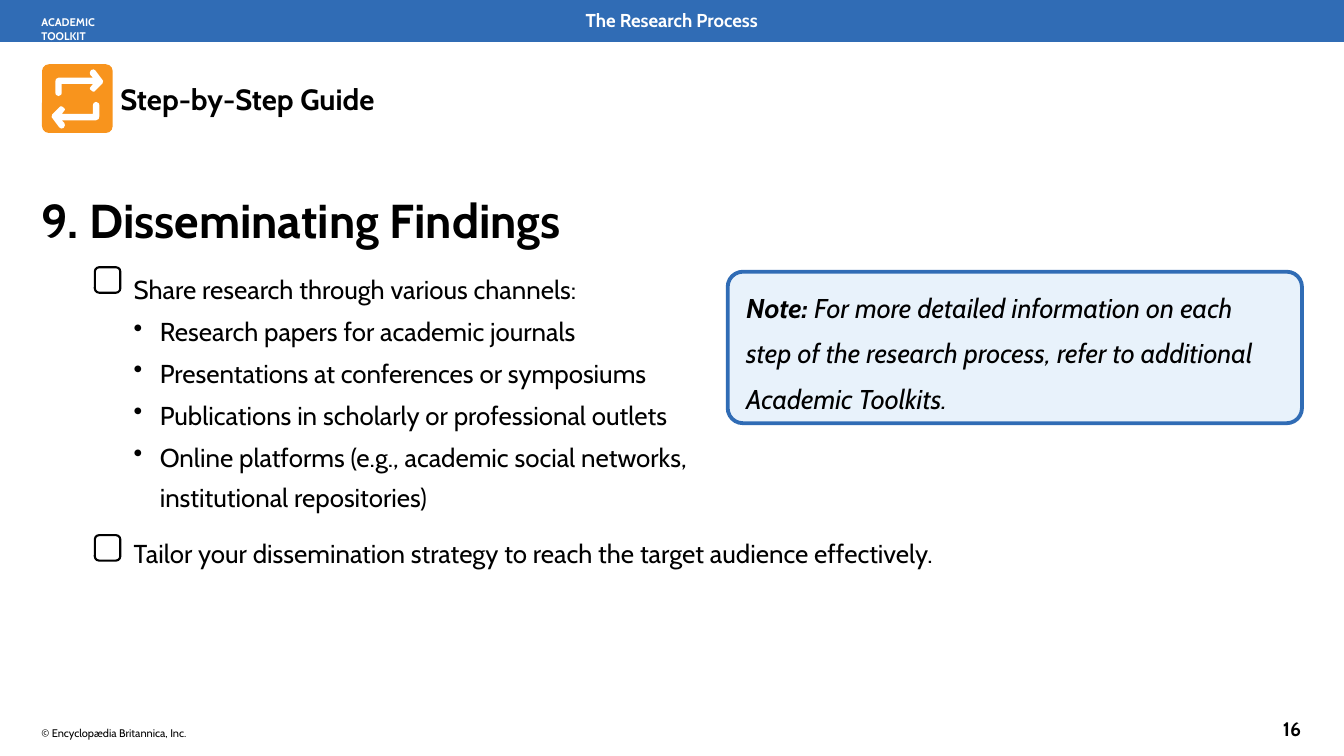
from lxml.etree import SubElement
from pptx import Presentation
from pptx.dml.color import RGBColor
from pptx.enum.shapes import MSO_SHAPE
from pptx.enum.text import MSO_ANCHOR, MSO_AUTO_SIZE, PP_ALIGN
from pptx.oxml.ns import qn
from pptx.util import Pt

PX = 9525
FONT = "Cabin"
COLOURS = {
    "blue": "306CB5",
    "pale": "E8F2FB",
    "orange": "F8941D",
    "white": "FFFFFF",
    "black": "000000",
}

CHANNELS = [
    "Research papers for academic journals",
    "Presentations at conferences or symposiums",
    "Publications in scholarly or professional outlets",
    "Online platforms (e.g., academic social networks,\vinstitutional repositories)",
]

ARROW = [
    (162, 127), (150, 111), (147, 109), (143, 110), (141, 114), (142, 118),
    (146, 122), (92, 122), (88, 124), (87, 128), (87, 146), (88, 149),
    (92, 151), (96, 149), (97, 146), (97, 132), (146, 132), (142, 137),
    (141, 139), (142, 141), (146, 144), (148, 144), (161, 131),
]
ICON_CENTRE = (121.5, 155.5)


def colour(name):
    return RGBColor.from_string(COLOURS[name])


def box(left, top, width, height):
    return [value * PX for value in (left, top, width, height)]


def style_runs(paragraph, size, bold=False, italic=False, ink="black"):
    for run in paragraph.runs:
        run.font.name = FONT
        run.font.size = Pt(size)
        run.font.bold = bold
        run.font.italic = italic
        run.font.color.rgb = colour(ink)


def prepare_frame(text_frame):
    """Wrapped text, anchored to the top, with no insets."""
    text_frame.word_wrap = True
    text_frame.auto_size = MSO_AUTO_SIZE.NONE
    text_frame.vertical_anchor = MSO_ANCHOR.TOP
    text_frame.margin_left = text_frame.margin_right = 0
    text_frame.margin_top = text_frame.margin_bottom = 0


def add_frame(slide, place):
    text_frame = slide.shapes.add_textbox(*box(*place)).text_frame
    prepare_frame(text_frame)
    return text_frame


def add_label(slide, text, place, size, align=PP_ALIGN.LEFT, **style):
    paragraph = add_frame(slide, place).paragraphs[0]
    paragraph.text = text
    paragraph.alignment = align
    style_runs(paragraph, size, **style)


def add_title(slide, text, place, size):
    title = slide.shapes.title
    title.left, title.top, title.width, title.height = box(*place)
    prepare_frame(title.text_frame)
    title.text_frame.text = text
    paragraph = title.text_frame.paragraphs[0]
    paragraph.alignment = PP_ALIGN.LEFT
    style_runs(paragraph, size, bold=True)


def paint(shape, fill=None, line=None, line_width=0):
    shape.shadow.inherit = False
    if fill:
        shape.fill.solid()
        shape.fill.fore_color.rgb = colour(fill)
    else:
        shape.fill.background()
    if line:
        shape.line.color.rgb = colour(line)
        shape.line.width = Pt(line_width)
    else:
        shape.line.fill.background()


def add_rounded(slide, place, corner, **look):
    shape = slide.shapes.add_shape(MSO_SHAPE.ROUNDED_RECTANGLE, *box(*place))
    shape.adjustments[0] = corner
    paint(shape, **look)


def add_cycle_icon(slide):
    """Orange tile with one bent arrow and the same arrow turned half round."""
    add_rounded(slide, (66, 101, 111, 108), 0.1, fill="orange")
    centre_x, centre_y = ICON_CENTRE
    turned = [(2 * centre_x - x, 2 * centre_y - y) for x, y in ARROW]
    builder = slide.shapes.build_freeform(*ARROW[0], scale=PX)
    builder.add_line_segments(ARROW[1:], close=True)
    builder.move_to(*turned[0])
    builder.add_line_segments(turned[1:], close=True)
    paint(builder.convert_to_shape(), fill="white")


def add_bullet(paragraph, indent):
    properties = paragraph._p.get_or_add_pPr()
    properties.set("marL", str(indent * PX))
    properties.set("indent", str(-indent * PX))
    SubElement(properties, qn("a:buChar")).set("char", "•")


def add_checklist(slide):
    text_frame = add_frame(slide, (210, 415, 1821, 480))
    lines = [
        ("Share research through various channels:", 0, False),
        *[(channel, 1.9, True) for channel in CHANNELS],
        ("Tailor your dissemination strategy to reach the target audience effectively.", 18, False),
    ]
    for index, (text, space_before, bulleted) in enumerate(lines):
        paragraph = text_frame.add_paragraph() if index else text_frame.paragraphs[0]
        paragraph.text = text
        paragraph.line_spacing = 1.3
        paragraph.space_before = Pt(space_before)
        if bulleted:
            add_bullet(paragraph, 41)
        style_runs(paragraph, 30.5)
    for top in (420, 841):
        add_rounded(slide, (149, top, 40, 40), 0.17, line="black", line_width=2.5)


def add_note(slide):
    add_rounded(slide, (1143, 427, 902, 238), 0.1, fill="pale", line="blue", line_width=4.5)
    paragraph = add_frame(slide, (1172, 437, 810, 217)).paragraphs[0]
    paragraph.text = "Note: "
    paragraph.add_run().text = (
        "For more detailed information on each step of the research process, "
        "refer to additional Academic Toolkits."
    )
    paragraph.line_spacing = 1.4
    style_runs(paragraph, 32, italic=True)
    paragraph.runs[0].font.bold = True


def main():
    presentation = Presentation()
    presentation.slide_width, presentation.slide_height = 2111 * PX, 1188 * PX
    slide = presentation.slides.add_slide(presentation.slide_layouts[5])

    header = slide.shapes.add_shape(MSO_SHAPE.RECTANGLE, *box(0, 0, 2111, 66))
    paint(header, fill="blue")
    add_label(slide, "The Research Process", (711, 14, 688, 37), 22,
              align=PP_ALIGN.CENTER, bold=True, ink="white")
    add_label(slide, "ACADEMIC TOOLKIT", (65, 25, 120, 42), 13, bold=True, ink="white")

    add_cycle_icon(slide)
    add_label(slide, "Step-by-Step Guide", (189, 127, 800, 56), 34.5, bold=True)
    add_title(slide, "9. Disseminating Findings", (65, 300, 1967, 91), 56)
    add_checklist(slide)
    add_note(slide)

    add_label(slide, "© Encyclopædia Britannica, Inc.", (65, 1141, 300, 24), 13)
    add_label(slide, "16", (2015, 1126, 40, 39), 23, bold=True)
    presentation.save("out.pptx")


if __name__ == "__main__":
    main()
